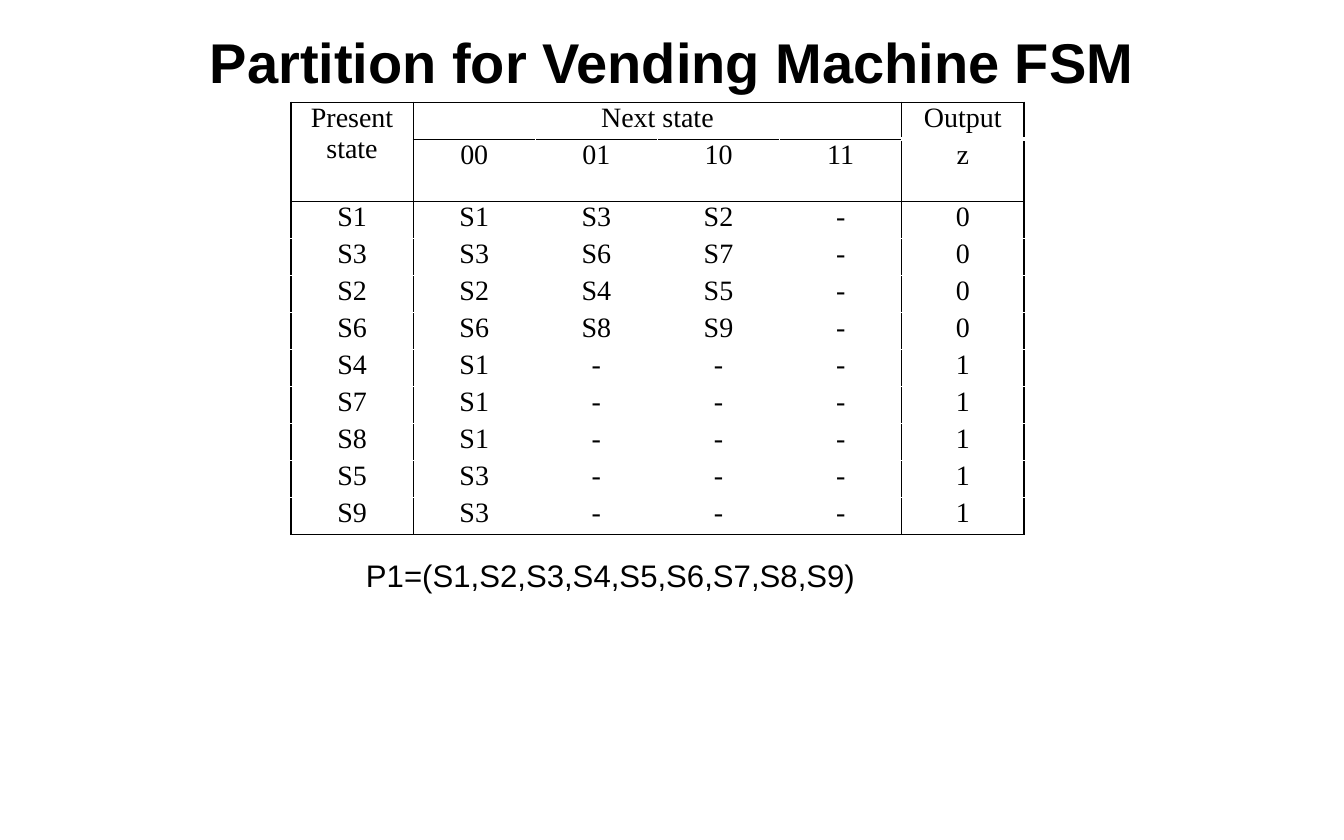
from dataclasses import dataclass

from lxml import etree
from pptx import Presentation
from pptx import util as u
from pptx.dml.color import RGBColor
from pptx.enum import text
from pptx.oxml.ns import qn

COLOURS = {"ink": "000000", "paper": "FFFFFF"}
HEADER = [
    ["Present state", "Next state", "", "", "", "Output"],
    ["", "00", "01", "10", "11", "z"],
]
TRANSITIONS = [
    "S1 S1 S3 S2 - 0",
    "S3 S3 S6 S7 - 0",
    "S2 S2 S4 S5 - 0",
    "S6 S6 S8 S9 - 0",
    "S4 S1 - - - 1",
    "S7 S1 - - - 1",
    "S8 S1 - - - 1",
    "S5 S3 - - - 1",
    "S9 S3 - - - 1",
]
ROWS = HEADER + [line.split() for line in TRANSITIONS]
LAST_ROW, OUTPUT = len(ROWS) - 1, len(ROWS[0]) - 1


@dataclass
class Caption:
    words: str
    left: float
    top: float
    width: float
    height: float
    size: int
    bold: bool = False
    wrap: bool = True
    align: text.PP_ALIGN = text.PP_ALIGN.LEFT
    anchor: text.MSO_ANCHOR = text.MSO_ANCHOR.TOP


CAPTIONS = [
    Caption("P1=(S1,S2,S3,S4,S5,S6,S7,S8,S9)", 8.05, 12.5, 11.68, 1.12, 20, wrap=False),
    Caption("Partition for Vending Machine FSM", 2.54, 0.43, 25.4, 1.9, 36, bold=True,
            align=text.PP_ALIGN.CENTER, anchor=text.MSO_ANCHOR.MIDDLE),
]


def write(frame, words: str, face: str, size: int, bold: bool, align) -> None:
    para = frame.paragraphs[0]
    para.text = words
    para.alignment = align
    para.font.name, para.font.size, para.font.bold = face, u.Pt(size), bold
    para.font.color.rgb = RGBColor.from_string(COLOURS["ink"])


def draw_caption(page, caption: Caption) -> None:
    box = page.shapes.add_textbox(*map(u.Cm, (caption.left, caption.top, caption.width, caption.height)))
    frame = box.text_frame
    frame.word_wrap = caption.wrap
    frame.vertical_anchor = caption.anchor
    if not caption.wrap:
        frame.auto_size = text.MSO_AUTO_SIZE.SHAPE_TO_FIT_TEXT
    write(frame, caption.words, "Arial", caption.size, caption.bold, caption.align)


def draw_borders(cell, row: int, column: int) -> None:
    spans_columns = cell.is_merge_origin and cell.span_width > 1
    inked = {
        "L": column in (0, 1, OUTPUT),
        "R": column in (0, OUTPUT - 1, OUTPUT) or spans_columns,
        "T": row in (0, 1, 2) and (row, column) != (1, OUTPUT),
        "B": row in (0, 1, LAST_ROW) and (row, column) != (0, OUTPUT),
    }
    properties = cell._tc.get_or_add_tcPr()
    for side, is_inked in inked.items():
        points = 3 if (side, row, column) == ("B", 0, OUTPUT) else 1
        line = etree.SubElement(properties, qn(f"a:ln{side}"), w=str(u.Pt(points)))
        fill = etree.SubElement(line, qn("a:solidFill"))
        etree.SubElement(fill, qn("a:srgbClr"), val=COLOURS["ink" if is_inked else "paper"])


def draw_state_table(page) -> None:
    column_width, row_height = u.Cm(2.77), u.Cm(0.84)
    table = page.shapes.add_table(
        len(ROWS), len(ROWS[0]), u.Cm(6.6), u.Cm(2.32),
        column_width * len(ROWS[0]), row_height * len(ROWS)).table
    table.first_row = table.horz_banding = False
    table.cell(0, 0).merge(table.cell(1, 0))
    table.cell(0, 1).merge(table.cell(0, OUTPUT - 1))
    for row, values in enumerate(ROWS):
        for column, value in enumerate(values):
            cell = table.cell(row, column)
            cell.margin_left = cell.margin_right = cell.margin_top = cell.margin_bottom = 0
            draw_borders(cell, row, column)
            cell.fill.background()
            write(cell.text_frame, value, "Times New Roman", 18, False, text.PP_ALIGN.CENTER)


def main() -> None:
    """Build the slide with the state table of the vending machine."""
    deck = Presentation()
    deck.slide_width, deck.slide_height = u.Cm(30.48), u.Cm(19.05)
    page = deck.slides.add_slide(deck.slide_layouts[6])
    draw_state_table(page)
    for caption in CAPTIONS:
        draw_caption(page, caption)
    deck.save("out.pptx")


if __name__ == "__main__":
    main()
